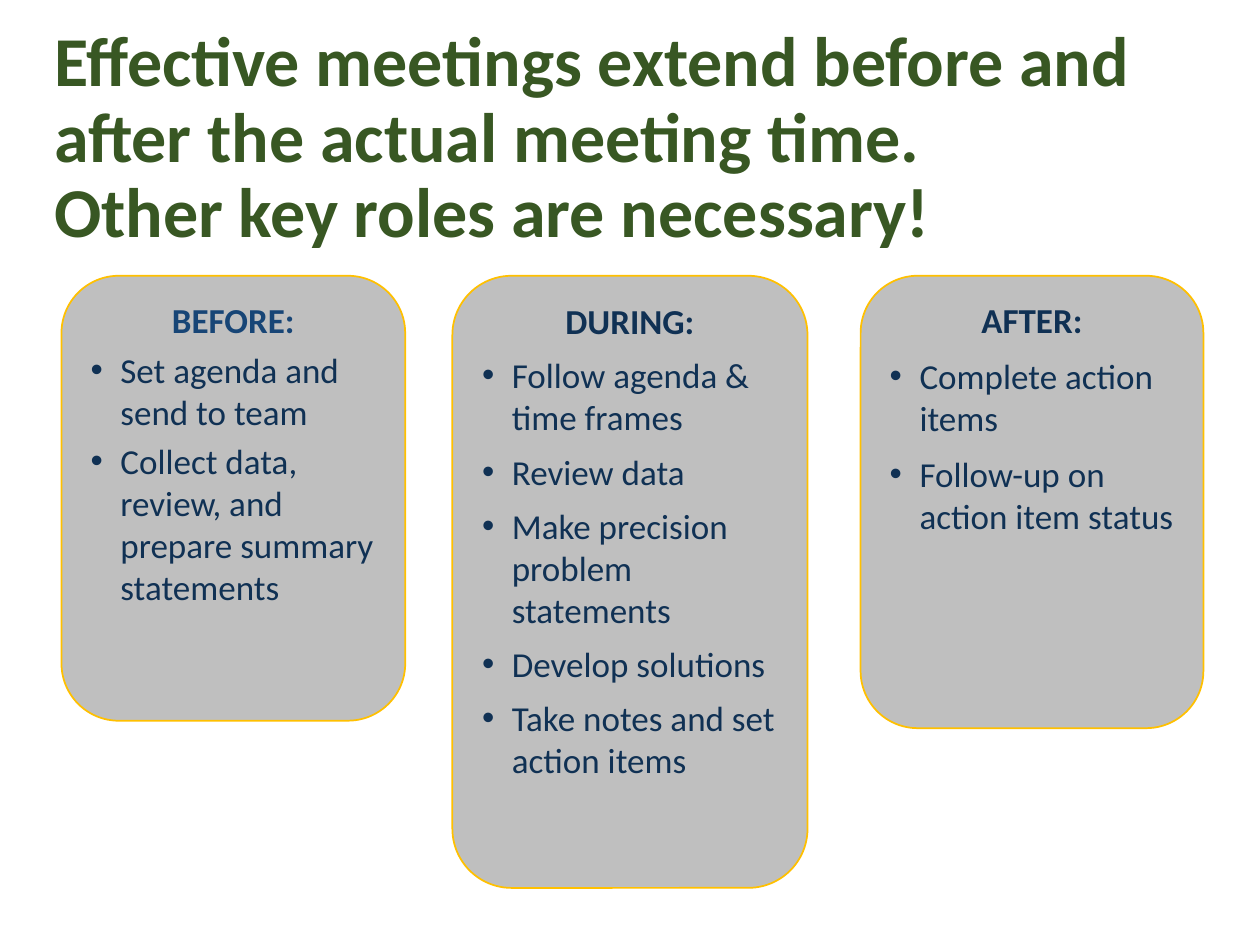
from dataclasses import dataclass

from lxml import etree
from pptx import Presentation
from pptx import util as u
from pptx.dml.color import RGBColor
from pptx.enum import shapes, text
from pptx.oxml.ns import qn

HUES = {
    "title": "385723",
    "card": "BFBFBF",
    "edge": "FFC000",
    "blue": "174576",
    "navy": "103154",
}
TOP = u.Cm(5.56)
INDENT = u.Cm(0.6)


@dataclass
class Card:
    head: str
    items: list[str]
    left: float
    width: float
    height: float
    before: int
    hue: str = "navy"


CARDS = [
    Card("BEFORE:", [
        "Set agenda and send to team",
        "Collect data, review, and prepare summary statements",
    ], 1.24, 6.93, 8.97, 0, "blue"),
    Card("DURING:", [
        "Follow agenda & time frames",
        "Review data",
        "Make precision problem statements",
        "Develop solutions",
        "Take notes and set action items",
    ], 9.12, 7.16, 12.34, 3),
    Card("AFTER:", [
        "Complete action items",
        "Follow-up on action item status",
    ], 17.35, 6.91, 9.12, 4),
]


def color(name: str) -> RGBColor:
    return RGBColor.from_string(HUES[name])


def apply(target, values: dict) -> None:
    for key, value in values.items():
        setattr(target, key, value)


def style(para, size: int, hue: str, bold: bool) -> None:
    apply(para.font, {"name": "Calibri", "size": u.Pt(size), "bold": bold})
    para.font.color.rgb = color(hue)


def bullet(para) -> None:
    props = para._p.get_or_add_pPr()
    props.set("marL", str(INDENT))
    props.set("indent", str(-INDENT))
    etree.SubElement(props, qn("a:buFont"), typeface="Arial")
    etree.SubElement(props, qn("a:buChar"), char="•")


def frame(shape, anchor) -> None:
    apply(shape.text_frame, {
        "word_wrap": True,
        "vertical_anchor": anchor,
        "margin_left": u.Cm(0.25),
        "margin_right": u.Cm(0.25),
        "margin_top": u.Cm(0.13),
        "margin_bottom": u.Cm(0.13),
    })


def draw_title(slide) -> None:
    box = slide.shapes.add_textbox(u.Cm(0.84), u.Cm(0.64), u.Cm(24.56), u.Cm(4.34))
    frame(box, text.MSO_ANCHOR.MIDDLE)
    para = box.text_frame.paragraphs[0]
    para.text = ("Effective meetings extend before and after the actual meeting time. \v"
                 "Other key roles are necessary!")
    para.line_spacing = 0.9
    style(para, 40, "title", True)


def draw_card(slide, card: Card) -> None:
    shape = slide.shapes.add_shape(
        shapes.MSO_SHAPE.ROUNDED_RECTANGLE,
        u.Cm(card.left), TOP, u.Cm(card.width), u.Cm(card.height))
    shape.shadow.inherit = False
    shape.fill.solid()
    shape.fill.fore_color.rgb = color("card")
    shape.line.color.rgb = color("edge")
    shape.line.width = u.Pt(1)
    frame(shape, text.MSO_ANCHOR.TOP)

    head = shape.text_frame.paragraphs[0]
    apply(head, {"text": card.head, "alignment": text.PP_ALIGN.CENTER,
                 "space_after": u.Pt(4)})
    style(head, 20, card.hue, True)
    for item in card.items:
        para = shape.text_frame.add_paragraph()
        bullet(para)
        apply(para, {"text": item, "alignment": text.PP_ALIGN.LEFT,
                     "space_before": u.Pt(card.before), "space_after": u.Pt(4)})
        style(para, 20, "navy", False)


def main() -> None:
    deck = Presentation()
    apply(deck, {"slide_width": u.Cm(25.4), "slide_height": u.Cm(19.05)})
    slide = deck.slides.add_slide(deck.slide_layouts[6])
    draw_title(slide)
    for card in CARDS:
        draw_card(slide, card)
    deck.save("out.pptx")


if __name__ == "__main__":
    main()
